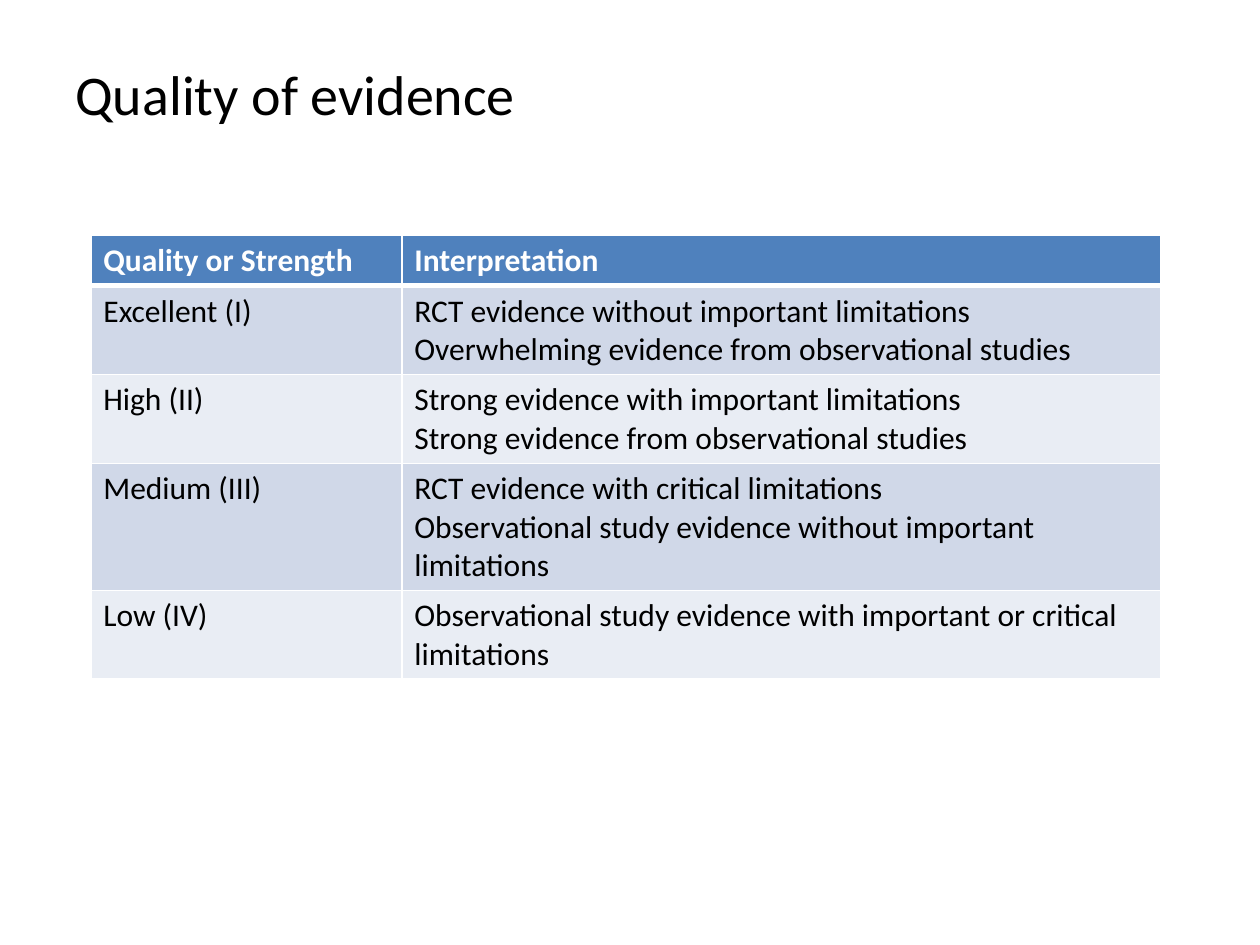
from dataclasses import dataclass

from lxml import etree
from pptx import Presentation, util as u
from pptx.dml.color import RGBColor
from pptx.enum import text
from pptx.oxml.ns import qn


@dataclass(frozen=True)
class Theme:
    font: str = "Calibri"
    title_size: int = 32
    table_size: int = 18
    ink: str = "000000"
    paper: str = "FFFFFF"
    header: str = "4F81BD"
    bands: tuple = ("D0D8E8", "E9EDF4")
    rule: float = 1
    header_rule: float = 3


HEADINGS = ("Quality or Strength", "Interpretation")
# Grade, interpretations, number of lines they take up
GRADES = (
    ("Excellent (I)", "RCT evidence without important limitations\n"
     "Overwhelming evidence from observational studies", 2),
    ("High (II)", "Strong evidence with important limitations\n"
     "Strong evidence from observational studies", 2),
    ("Medium (III)", "RCT evidence with critical limitations\n"
     "Observational study evidence without important limitations", 3),
    ("Low (IV)", "Observational study evidence with important or critical limitations", 2),
)


class SlideBuilder:
    def __init__(self, slide, theme):
        self.slide = slide
        self.theme = theme

    def style(self, text_frame, size, color, bold=False):
        for paragraph in text_frame.paragraphs:
            for run in paragraph.runs:
                run.font.name = self.theme.font
                run.font.size = u.Pt(size)
                run.font.bold = bold
                run.font.color.rgb = RGBColor.from_string(color)

    def title(self, wording, left, top, width, height):
        box = self.slide.shapes.add_textbox(u.Cm(left), u.Cm(top), u.Cm(width), u.Cm(height))
        frame = box.text_frame
        frame.word_wrap = True
        frame.vertical_anchor = text.MSO_ANCHOR.TOP
        frame.text = wording
        self.style(frame, self.theme.title_size, self.theme.ink)

    def borders(self, cell, top, bottom):
        properties = cell._tc.get_or_add_tcPr()
        rule = self.theme.rule
        for side, width in (("L", rule), ("R", rule), ("T", top), ("B", bottom)):
            line = etree.SubElement(properties, qn(f"a:ln{side}"), w=str(u.Pt(width)))
            fill = etree.SubElement(line, qn("a:solidFill"))
            etree.SubElement(fill, qn("a:srgbClr"), val=self.theme.paper)

    def cell(self, cell, wording, row):
        theme = self.theme
        is_header = row == 0
        cell.text = wording
        self.style(cell.text_frame, theme.table_size,
                   theme.paper if is_header else theme.ink, is_header)
        self.borders(cell, theme.header_rule if row == 1 else theme.rule,
                     theme.header_rule if is_header else theme.rule)
        cell.fill.solid()
        color = theme.header if is_header else theme.bands[(row - 1) % 2]
        cell.fill.fore_color.rgb = RGBColor.from_string(color)

    def table(self, headings, records, left, top, widths, line_height, padding):
        """Each record ends with its line count, which sets the row height."""
        rows = [(*headings, 1), *records]
        heights = [padding + line_height * lines for *_, lines in rows]
        table = self.slide.shapes.add_table(
            len(rows), len(widths), u.Cm(left), u.Cm(top),
            u.Cm(sum(widths)), u.Cm(sum(heights))).table
        for column, width in zip(table.columns, widths):
            column.width = u.Cm(width)
        for row, (*wordings, _) in enumerate(rows):
            table.rows[row].height = u.Cm(heights[row])
            for column, wording in enumerate(wordings):
                self.cell(table.cell(row, column), wording, row)


def main():
    presentation = Presentation()
    presentation.slide_width = u.Cm(25.4)
    presentation.slide_height = u.Cm(19.05)
    slide = presentation.slides.add_slide(presentation.slide_layouts[6])
    builder = SlideBuilder(slide, Theme())
    builder.title("Quality of evidence", 1.27, 1.07, 22.86, 3.25)
    builder.table(HEADINGS, GRADES, 1.83, 4.74, (6.27, 15.29), line_height=0.77, padding=0.25)
    presentation.save("out.pptx")


if __name__ == "__main__":
    main()
